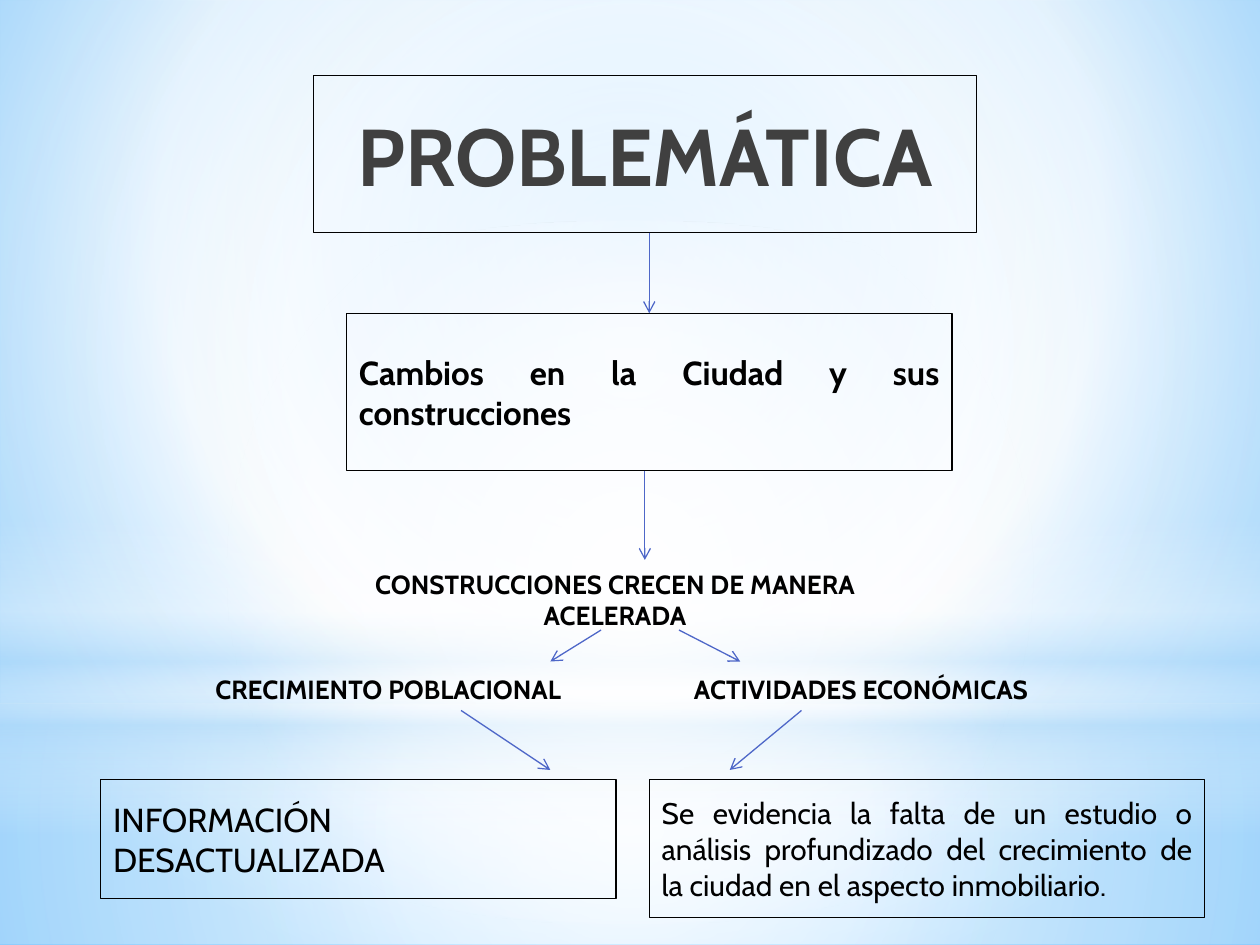
"""Build the problem flow chart slide."""
import pptx
import pptx.dml.color
import pptx.enum.shapes
import pptx.enum.text
import pptx.oxml
import pptx.oxml.ns
import pptx.util

Pt = pptx.util.Pt
qn = pptx.oxml.ns.qn
Kind = pptx.enum.shapes.MSO_SHAPE
Align = pptx.enum.text.PP_ALIGN
Anchor = pptx.enum.text.MSO_ANCHOR
HUES = {"ink": "000000", "title": "404040", "arrow": "4E67C8", "white": "FFFFFF",
        "pale": "B4DCFA", "sky": "9ED5FF", "deep": "5BB9FF"}
MID = (50, 50, 50, 50)


def color(name):
    return pptx.dml.color.RGBColor.from_string(HUES[name])


def write(shape, text, size=15, bold=False, hue="ink", align=Align.LEFT, anchor=Anchor.TOP):
    frame = shape.text_frame
    frame.word_wrap = True
    frame.auto_size = pptx.enum.text.MSO_AUTO_SIZE.NONE
    frame.vertical_anchor = anchor
    para = frame.paragraphs[0]
    para.alignment = align
    run = para.add_run()
    run.text = text
    run.font.name = "Cabin"
    run.font.size = Pt(size)
    run.font.bold = bold
    run.font.color.rgb = color(hue)


def blend(root, stops, focus=None):
    marks = "".join(
        f'<a:gs pos="{pos * 1000}"><a:srgbClr val="{HUES[hue]}">'
        f'<a:alpha val="{alpha * 1000}"/></a:srgbClr></a:gs>'
        for pos, hue, alpha in stops)
    if focus:
        sides = " ".join(f'{side}="{val * 1000}"' for side, val in zip("ltrb", focus))
        way = f'<a:path path="circle"><a:fillToRect {sides}/></a:path>'
    else:
        way = '<a:lin ang="5400000" scaled="0"/>'
    grad = pptx.oxml.parse_xml(
        f'<a:gradFill {pptx.oxml.ns.nsdecls("a")} rotWithShape="1">'
        f'<a:gsLst>{marks}</a:gsLst>{way}</a:gradFill>')
    solid = root.find(".//" + qn("a:solidFill"))
    solid.getparent().replace(solid, grad)


class Chart:
    def __init__(self, slide):
        self.slide = slide
        self.shapes = slide.shapes

    def ground(self, stops, focus):
        self.slide.background.fill.solid()
        blend(self.slide.element.find(".//" + qn("p:bgPr")), stops, focus)

    def layer(self, kind, place, stops, focus=None):
        shape = self.shapes.add_shape(kind, *map(Pt, place))
        shape.shadow.inherit = False
        shape.line.fill.background()
        shape.fill.solid()
        blend(shape.element, stops, focus)

    def frame(self, shape):
        shape.fill.background()
        shape.line.color.rgb = color("ink")
        shape.line.width = Pt(0.75)

    def title(self, place, text):
        shape = self.shapes.title
        shape.left, shape.top, shape.width, shape.height = map(Pt, place)
        shape.element.getparent().append(shape.element)
        self.frame(shape)
        write(shape, text, size=46, bold=True, hue="title",
              align=Align.CENTER, anchor=Anchor.MIDDLE)

    def box(self, place, text, **style):
        shape = self.shapes.add_shape(Kind.RECTANGLE, *map(Pt, place))
        shape.shadow.inherit = False
        self.frame(shape)
        write(shape, text, align=Align.JUSTIFY, anchor=Anchor.MIDDLE, **style)

    def label(self, place, text, **style):
        write(self.shapes.add_textbox(*map(Pt, place)), text, bold=True, **style)

    def arrow(self, *ends):
        link = self.shapes.add_connector(
            pptx.enum.shapes.MSO_CONNECTOR.STRAIGHT, *map(Pt, ends))
        link.line.color.rgb = color("arrow")
        link.line.width = Pt(0.75)
        line = link.line._get_or_add_ln()
        line.append(line.makeelement(qn("a:tailEnd"), {"type": "arrow"}))
        props = link.element.spPr
        props.append(props.makeelement(qn("a:effectLst"), {}))


def main():
    deck = pptx.Presentation()
    deck.slide_width, deck.slide_height = Pt(720), Pt(540)
    chart = Chart(deck.slides.add_slide(deck.slide_layouts[5]))

    chart.ground([(0, "sky", 100), (60, "white", 100), (100, "deep", 100)], (20, 10, 20, 60))
    chart.layer(Kind.RECTANGLE, (0, 402, 720, 138),
                [(0, "white", 91), (37, "white", 76), (100, "pale", 79)], MID)
    chart.layer(Kind.RECTANGLE, (0, 0, 720, 402),
                [(0, "white", 89), (48, "white", 62), (100, "pale", 79)], MID)
    chart.layer(Kind.RECTANGLE, (0, 297, 720, 180),
                [(0, "white", 0), (29, "white", 30), (45, "pale", 40),
                 (55, "white", 26), (65, "pale", 60), (100, "white", 0)])
    chart.layer(Kind.OVAL, (0, 126, 720, 402), [(0, "white", 100), (56, "white", 0)], MID)

    chart.title((179, 43, 379, 90), "PROBLEMÁTICA")
    chart.box((198, 179, 346, 90), "Cambios en la Ciudad y sus construcciones",
              size=19, bold=True)
    chart.label((168.5, 321, 366, 44), "CONSTRUCCIONES CRECEN DE MANERA ACELERADA",
                align=Align.CENTER)
    chart.label((116, 381, 236, 25), "CRECIMIENTO POBLACIONAL")
    chart.label((389.5, 381, 208, 25), "ACTIVIDADES ECONÓMICAS")
    chart.box((57.5, 445.5, 294.5, 68), "INFORMACIÓN DESACTUALIZADA", size=19)
    chart.box((371, 445.5, 317.5, 79),
              "Se evidencia la falta de un estudio o análisis profundizado del "
              "crecimiento de la ciudad en el aspecto inmobiliario.", size=17)

    for ends in ((371, 133, 371, 179), (368.5, 269, 368.5, 320),
                 (343.5, 360, 314.5, 378), (388, 360, 423, 378),
                 (263.5, 406, 314.5, 440), (458, 406, 417, 440)):
        chart.arrow(*ends)
    deck.save("out.pptx")


if __name__ == "__main__":
    main()
